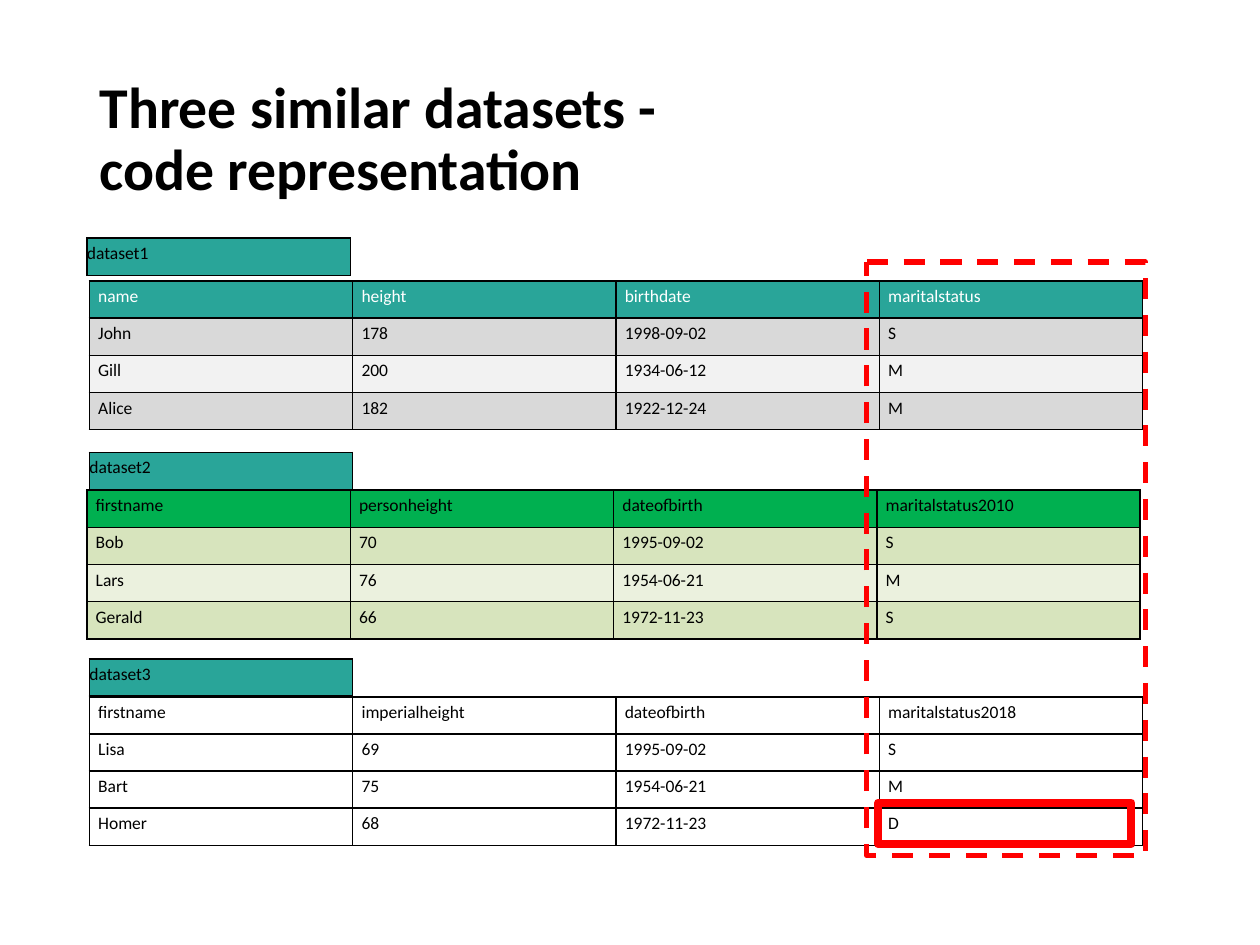
"""Build a slide showing three similar datasets with differing codes."""
from lxml import etree
from pptx import Presentation
from pptx.dml.color import RGBColor
from pptx.enum.dml import MSO_LINE
from pptx.enum.shapes import MSO_SHAPE
from pptx.enum.text import MSO_ANCHOR, PP_ALIGN
from pptx.oxml.ns import qn
from pptx.util import Inches, Pt

DASH = MSO_LINE.DASH
ROUNDED, RECTANGLE = MSO_SHAPE.ROUNDED_RECTANGLE, MSO_SHAPE.RECTANGLE
MIDDLE, LEFT = MSO_ANCHOR.MIDDLE, PP_ALIGN.LEFT

BLACK = RGBColor(0x00, 0x00, 0x00)
WHITE = RGBColor(0xFF, 0xFF, 0xFF)
TEAL = RGBColor(0x29, 0xA5, 0x99)
GREEN = RGBColor(0x00, 0xB0, 0x50)
GREY = RGBColor(0xD9, 0xD9, 0xD9)
PALE_GREY = RGBColor(0xF2, 0xF2, 0xF2)
LIME = RGBColor(0xD7, 0xE4, 0xBD)
PALE_LIME = RGBColor(0xEB, 0xF1, 0xDE)
RED = RGBColor(0xFF, 0x00, 0x00)

FONT = "Calibri"
COLUMN_WIDTH = 2.09
ROW_HEIGHT = 1.18 / 4

TITLE = ["Three similar datasets -", "code representation"]
DATASETS = [
    {
        "label": "dataset1", "label_at": (0.69, 1.89), "at": (0.71, 2.23),
        "fills": [TEAL, GREY, PALE_GREY, GREY], "header_color": WHITE,
        "rows": [
            ["name", "height", "birthdate", "maritalstatus"],
            ["John", "178", "1998-09-02", "S"],
            ["Gill", "200", "1934-06-12", "M"],
            ["Alice", "182", "1922-12-24", "M"],
        ],
    },
    {
        "label": "dataset2", "label_at": (0.71, 3.59), "at": (0.69, 3.89),
        "fills": [GREEN, LIME, PALE_LIME, LIME], "header_color": BLACK,
        "rows": [
            ["firstname", "personheight", "dateofbirth", "maritalstatus2010"],
            ["Bob", "70", "1995-09-02", "S"],
            ["Lars", "76", "1954-06-21", "M"],
            ["Gerald", "66", "1972-11-23", "S"],
        ],
    },
    {
        "label": "dataset3", "label_at": (0.71, 5.23), "at": (0.71, 5.53),
        "fills": [None] * 4, "header_color": BLACK,
        "rows": [
            ["firstname", "imperialheight", "dateofbirth", "maritalstatus2018"],
            ["Lisa", "69", "1995-09-02", "S"],
            ["Bart", "75", "1954-06-21", "M"],
            ["Homer", "68", "1972-11-23", "D"],
        ],
    },
]


def add_run(paragraph, text, size, color, bold=False):
    run = paragraph.add_run()
    run.text = text
    run.font.name = FONT
    run.font.size = Pt(size)
    run.font.bold = bold
    run.font.color.rgb = color


def add_borders(cell):
    properties = cell._tc.get_or_add_tcPr()
    for position, side in enumerate(("lnL", "lnR", "lnT", "lnB")):
        border = etree.Element(qn(f"a:{side}"), w=str(Pt(1)))
        fill = etree.SubElement(border, qn("a:solidFill"))
        etree.SubElement(fill, qn("a:srgbClr"), val=str(BLACK))
        properties.insert(position, border)


def add_grid(slide, at, rows, fills, header_color, left_margin):
    left, top = at
    columns = len(rows[0])
    grid = slide.shapes.add_table(
        len(rows), columns, Inches(left), Inches(top),
        Inches(COLUMN_WIDTH * columns), Inches(ROW_HEIGHT * len(rows))).table
    grid.first_row = grid.horz_banding = False
    for row_index, (values, fill) in enumerate(zip(rows, fills)):
        color = BLACK if row_index else header_color
        for column_index, value in enumerate(values):
            cell = grid.cell(row_index, column_index)
            cell.margin_left, cell.margin_right = Inches(left_margin), Inches(0.07)
            cell.margin_top = cell.margin_bottom = Inches(0.04)
            if fill is None:
                cell.fill.background()
            else:
                cell.fill.solid()
                cell.fill.fore_color.rgb = fill
            add_borders(cell)
            add_run(cell.text_frame.paragraphs[0], value, 10, color)


def add_highlight(slide, preset, box, width):
    highlight = slide.shapes.add_shape(preset, *map(Inches, box))
    highlight.shadow.inherit = False
    highlight.fill.background()
    highlight.line.color.rgb = RED
    highlight.line.width = Pt(width)
    return highlight


def add_title(slide):
    title = slide.shapes.title
    title.left, title.top = Inches(0.69), Inches(0.39)
    title.width, title.height = Inches(8.88), Inches(1.45)
    frame = title.text_frame
    frame.word_wrap = True
    frame.vertical_anchor = MIDDLE
    for index, line in enumerate(TITLE):
        paragraph = frame.add_paragraph() if index else frame.paragraphs[0]
        paragraph.alignment = LEFT
        paragraph.line_spacing = 0.9
        paragraph.space_before = Pt(0)
        add_run(paragraph, line, 33, BLACK, bold=True)


def main():
    presentation = Presentation()
    presentation.slide_width, presentation.slide_height = Inches(10), Inches(7.5)
    slide = presentation.slides.add_slide(presentation.slide_layouts[5])
    add_title(slide)
    for dataset in DATASETS:
        add_grid(slide, dataset["at"], dataset["rows"], dataset["fills"],
                 dataset["header_color"], 0.07)
        add_grid(slide, dataset["label_at"], [[dataset["label"]]], [TEAL], BLACK, 0)
    status_column = add_highlight(slide, ROUNDED, (6.88, 2.08, 2.21, 4.71), 3)
    status_column.adjustments[0] = 0
    status_column.line.dash_style = DASH
    add_highlight(slide, RECTANGLE, (6.97, 6.37, 2.01, 0.33), 4.5)
    presentation.save("out.pptx")


if __name__ == "__main__":
    main()
